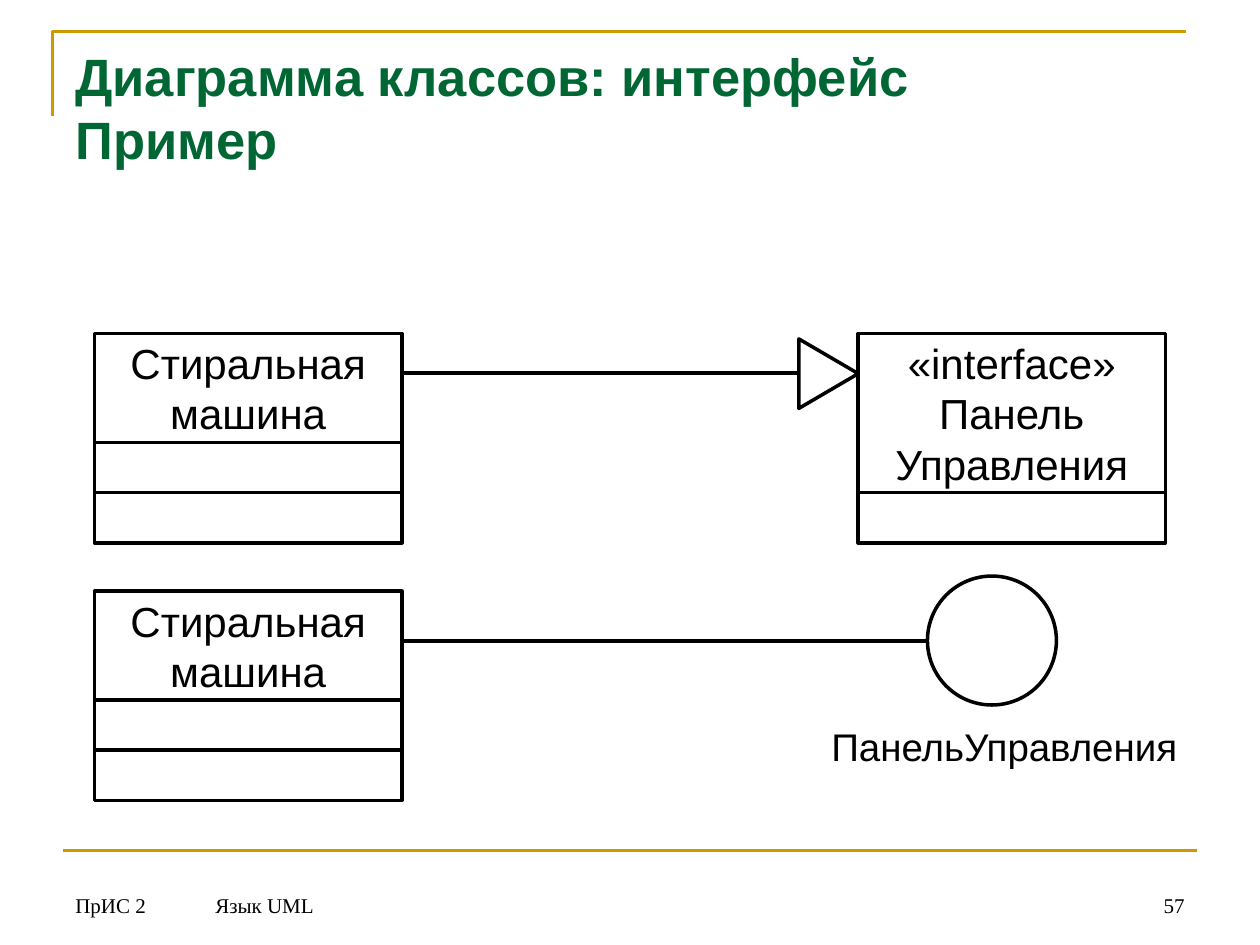
from lxml.etree import SubElement
from pptx import Presentation
from pptx.dml.color import RGBColor
from pptx.enum.shapes import MSO_CONNECTOR, MSO_SHAPE
from pptx.enum.text import MSO_ANCHOR, PP_ALIGN
from pptx.oxml.ns import qn
from pptx.util import Pt

BLACK = RGBColor(0x00, 0x00, 0x00)
GOLD = RGBColor(0xCC, 0x99, 0x00)
GREEN = RGBColor(0x00, 0x66, 0x33)

CLASS_WIDTH = 175.7
SECTION_HEIGHT = 28.7


def write_text(shape, lines, size=24, font="Arial", color=BLACK, bold=False,
               align=PP_ALIGN.LEFT, anchor=MSO_ANCHOR.TOP):
    """Write one paragraph per item; a vertical tab breaks a line within it."""
    frame = shape.text_frame
    frame.word_wrap = True
    frame.vertical_anchor = anchor
    for index, line in enumerate(lines):
        para = frame.add_paragraph() if index else frame.paragraphs[0]
        para.text = line
        para.alignment = align
        for span in para.runs:
            span.font.size = Pt(size)
            span.font.name = font
            span.font.bold = bold
            span.font.color.rgb = color


def add_text(page, left, top, width, height, lines, **text_format):
    box = page.shapes.add_textbox(Pt(left), Pt(top), Pt(width), Pt(height))
    write_text(box, lines, **text_format)


def outline(shape, color=BLACK, weight=2):
    shape.shadow.inherit = False
    shape.fill.background()
    shape.line.color.rgb = color
    shape.line.width = Pt(weight)


def add_outlined(page, kind, left, top, width, height):
    shape = page.shapes.add_shape(kind, Pt(left), Pt(top), Pt(width), Pt(height))
    outline(shape)
    return shape


def add_horizontal(page, left, right, y, color=BLACK, weight=2):
    line = page.shapes.add_connector(MSO_CONNECTOR.STRAIGHT,
                                     Pt(left), Pt(y), Pt(right), Pt(y))
    line.line.color.rgb = color
    line.line.width = Pt(weight)
    SubElement(line._element.spPr, qn("a:effectLst"))


def add_class(page, left, top, name_height, name_lines, sections):
    """Draw a UML class: a name box with empty sections below it."""
    name = add_outlined(page, MSO_SHAPE.RECTANGLE, left, top, CLASS_WIDTH, name_height)
    write_text(name, name_lines, align=PP_ALIGN.CENTER, anchor=MSO_ANCHOR.MIDDLE)
    for index in range(sections):
        add_outlined(page, MSO_SHAPE.RECTANGLE, left,
                     top + name_height + index * SECTION_HEIGHT,
                     CLASS_WIDTH, SECTION_HEIGHT)


def add_title(page, left, top, width, height):
    builder = page.shapes.build_freeform(Pt(left - 6), Pt(top + 44.5))
    builder.add_line_segments([(Pt(left - 6), Pt(top - 3.6)),
                               (Pt(left + width - 6), Pt(top - 3.6))], close=False)
    outline(builder.convert_to_shape(), GOLD, 1.5)
    add_text(page, left, top, width, height, ["Диаграмма классов: интерфейс\vПример"],
             size=30, color=GREEN, bold=True)


def add_footer(page, left, top, width, height):
    add_horizontal(page, left, left + width, top - 6, GOLD, 1.5)
    for offset, item_width, text, align in (
            (0, 69, "ПрИС 2", PP_ALIGN.LEFT),
            (80, 521, "Язык UML", PP_ALIGN.LEFT),
            (width - 40, 40, "57", PP_ALIGN.RIGHT)):
        add_text(page, left + offset, top, item_width, height, [text], size=12,
                 font="Times New Roman", align=align, anchor=MSO_ANCHOR.BOTTOM)


def add_realization(page, left, top, width):
    """Join a class to a full interface box by a line with a hollow triangle."""
    add_horizontal(page, left + CLASS_WIDTH, left + 402.5, top + 22.5, weight=2.25)
    add_class(page, left, top, 62.2, ["Стиральная", "машина"], 2)
    add_class(page, left + width - CLASS_WIDTH, top, 62.2 + SECTION_HEIGHT,
              ["«interface»", "Панель", "Управления"], 1)
    triangle = add_outlined(page, MSO_SHAPE.ISOSCELES_TRIANGLE,
                            left + 399.6, top + 5.9, 39.7, 34)
    triangle.rotation = 90


def add_lollipop(page, left, top):
    """Join a class to the short, circular form of the interface."""
    circle_left = left + 476
    add_class(page, left, top, 62.2, ["Стиральная", "машина"], 2)
    add_outlined(page, MSO_SHAPE.OVAL, circle_left, top - 8.6, 73.7, 73.7)
    add_text(page, left + 414, top + 72, 214.5, 34, ["ПанельУправления"], size=22)
    add_horizontal(page, left + CLASS_WIDTH, circle_left, top + 28.5)


def main():
    deck = Presentation()
    deck.slide_width, deck.slide_height = Pt(720), Pt(540)
    page = deck.slides.add_slide(deck.slide_layouts[6])
    add_title(page, 36, 21.6, 648, 90)
    add_realization(page, 54, 190.6, 612)
    add_lollipop(page, 54, 337.8)
    add_footer(page, 36, 492, 648, 36)
    deck.save("out.pptx")


if __name__ == "__main__":
    main()
